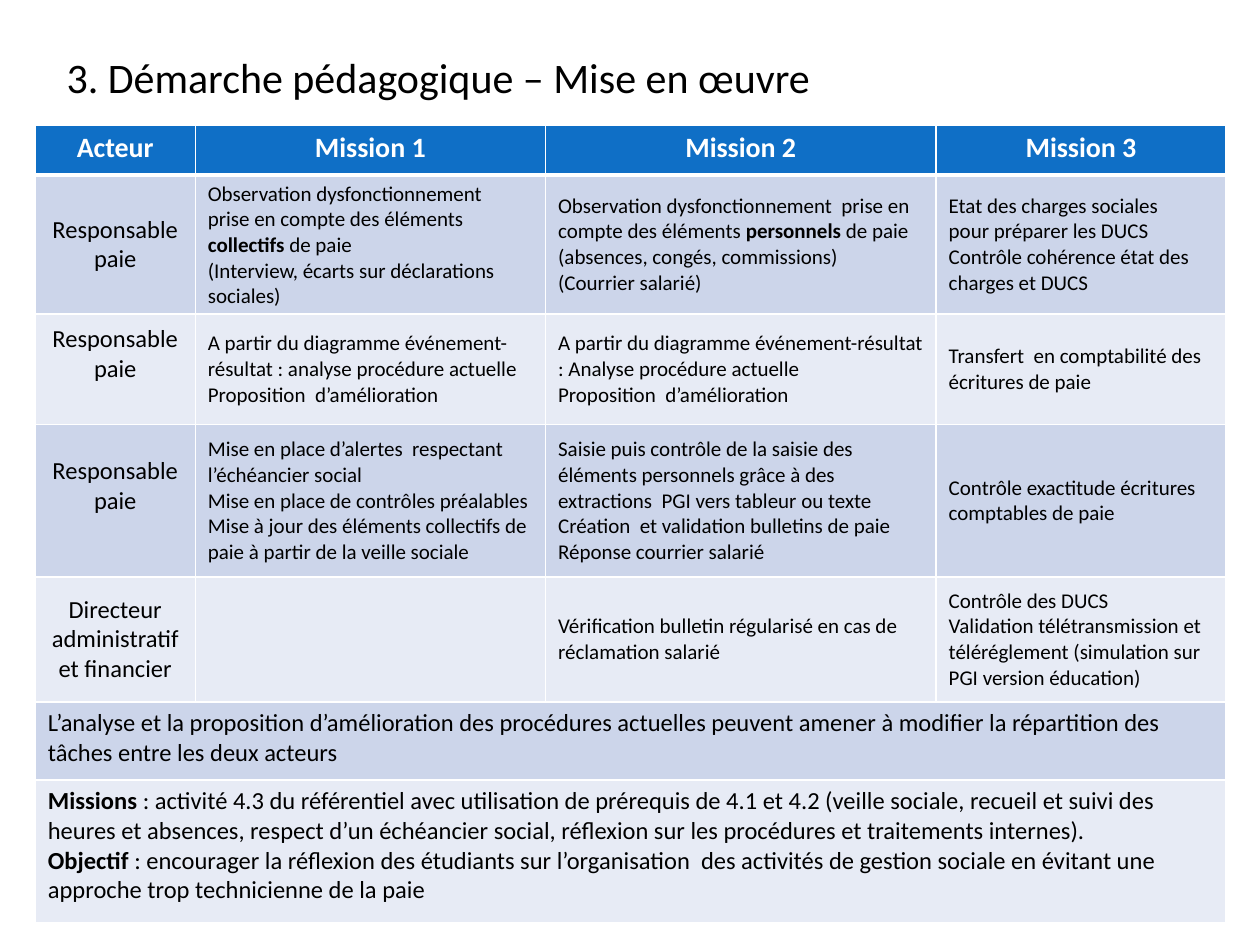
from lxml import etree
from pptx import Presentation
from pptx.dml.color import RGBColor
from pptx.enum.text import MSO_ANCHOR, PP_ALIGN
from pptx.oxml.ns import qn
from pptx.util import Inches, Pt

MIDDLE, TOP = MSO_ANCHOR.MIDDLE, MSO_ANCHOR.TOP
LEFT, CENTER = PP_ALIGN.LEFT, PP_ALIGN.CENTER

BLACK = RGBColor(0x00, 0x00, 0x00)
WHITE = RGBColor(0xFF, 0xFF, 0xFF)
BLUE = RGBColor(0x0F, 0x6F, 0xC6)
BANDS = (RGBColor(0xCC, 0xD5, 0xEA), RGBColor(0xE7, 0xEB, 0xF5))

FONT = "Calibri"
WIDE, HIGH = 10, 7.5
COLS = [1.27, 2.78, 3.1, 2.3]
ROWS = [0.4, 0.99, 0.88, 1.21, 0.99, 0.62, 1.13]
RAISED = (2, 3)  # rows whose actor sits above the middle

TITLE = "3. Démarche pédagogique – Mise en œuvre"
HEADS = ["Acteur", "Mission 1", "Mission 2", "Mission 3"]

# One line per paragraph; bold words stand between asterisks
TASKS = [
    ["Responsable paie",
     "Observation dysfonctionnement  prise en compte des éléments *collectifs* de paie\n"
     "(Interview, écarts sur déclarations sociales)",
     "Observation dysfonctionnement  prise en compte des éléments *personnels* de paie "
     "(absences, congés, commissions)\n(Courrier salarié)",
     "Etat des charges sociales\npour préparer les DUCS\n"
     "Contrôle cohérence état des charges et DUCS"],
    ["Responsable paie",
     "A partir du diagramme événement-résultat : analyse procédure actuelle\n"
     "Proposition  d’amélioration",
     "A partir du diagramme événement-résultat : Analyse procédure actuelle\n"
     "Proposition  d’amélioration",
     "Transfert  en comptabilité des écritures de paie"],
    ["Responsable paie",
     "Mise en place d’alertes  respectant l’échéancier social\n"
     "Mise en place de contrôles préalables\n"
     "Mise à jour des éléments collectifs de paie à partir de la veille sociale",
     "Saisie puis contrôle de la saisie des  éléments personnels grâce à des "
     "extractions  PGI vers tableur ou texte\n"
     "Création  et validation bulletins de paie\nRéponse courrier salarié",
     "Contrôle exactitude écritures comptables de paie"],
    ["Directeur administratif et financier",
     "",
     "Vérification bulletin régularisé en cas de réclamation salarié",
     "Contrôle des DUCS\nValidation télétransmission et téléréglement "
     "(simulation sur PGI version éducation)"],
]
NOTES = [
    "L’analyse et la proposition d’amélioration des procédures actuelles peuvent "
    "amener à modifier la répartition des tâches entre les deux acteurs",
    "*Missions *: activité 4.3 du référentiel avec utilisation de prérequis de 4.1 et 4.2 "
    "(veille sociale, recueil et suivi des heures et absences, respect d’un échéancier "
    "social, réflexion sur les procédures et traitements internes).\n"
    "*Objectif* : encourager la réflexion des étudiants sur l’organisation  des activités "
    "de gestion sociale en évitant une approche trop technicienne de la paie",
]


def write(frame, text, size, color=BLACK, align=LEFT, bold=False):
    """Fill a text frame, turning *marked* words bold."""
    for i, line in enumerate(text.split("\n")):
        para = frame.add_paragraph() if i else frame.paragraphs[0]
        para.alignment = align
        para.font.size = Pt(size)
        for j, part in enumerate(line.split("*")):
            if part:
                run = para.add_run()
                run.text = part
                font = run.font
                font.name, font.size = FONT, Pt(size)
                font.bold = bold or j % 2 == 1
                font.color.rgb = color


def edge(cell, head):
    """Draw white cell borders, thicker where the header meets the body."""
    props = cell._tc.get_or_add_tcPr()
    for side in ("lnL", "lnR", "lnT", "lnB"):
        width = 3 if head and side == "lnB" else 1
        line = etree.SubElement(props, qn("a:" + side), w=str(Pt(width)))
        fill = etree.SubElement(line, qn("a:solidFill"))
        etree.SubElement(fill, qn("a:srgbClr"), val=str(WHITE))


def paint(table):
    """Colour the header and the alternating bands."""
    for r, row in enumerate(table.rows):
        for cell in row.cells:
            edge(cell, r == 0)
            cell.fill.solid()
            cell.fill.fore_color.rgb = BANDS[(r - 1) % 2] if r else BLUE


def add_title(slide):
    box = slide.shapes.add_textbox(
        Inches(0.43), Inches(0.29), Inches(0.9 * WIDE), Inches(0.63))
    frame = box.text_frame
    frame.word_wrap = True
    frame.vertical_anchor = MIDDLE
    write(frame, TITLE, 24)


def add_grid(slide):
    shape = slide.shapes.add_table(
        len(ROWS), len(COLS), Inches(0.28), Inches(0.99),
        Inches(sum(COLS)), Inches(sum(ROWS)))
    table = shape.table
    for col, width in zip(table.columns, COLS):
        col.width = Inches(width)
    for row, height in zip(table.rows, ROWS):
        row.height = Inches(height)
    paint(table)
    return table


def fill_grid(table):
    # Header
    for c, text in enumerate(HEADS):
        write(table.cell(0, c).text_frame, text, 16, WHITE, CENTER, True)
    # Actors and their tasks
    for r, texts in enumerate(TASKS, 1):
        for c, text in enumerate(texts):
            cell = table.cell(r, c)
            cell.vertical_anchor = MIDDLE
            size, align = (12, LEFT) if c else (14, CENTER)
            write(cell.text_frame, text, size, align=align)
        if r in RAISED:
            table.cell(r, 0).margin_bottom = Inches(0.29)
    # Full-width notes
    for r, text in enumerate(NOTES, 1 + len(TASKS)):
        cell = table.cell(r, 0)
        cell.merge(table.cell(r, len(COLS) - 1))
        cell.vertical_anchor = TOP
        write(cell.text_frame, text, 14)


def main():
    deck = Presentation()
    deck.slide_width, deck.slide_height = Inches(WIDE), Inches(HIGH)
    slide = deck.slides.add_slide(deck.slide_layouts[6])
    add_title(slide)
    fill_grid(add_grid(slide))
    deck.save("out.pptx")


if __name__ == "__main__":
    main()
